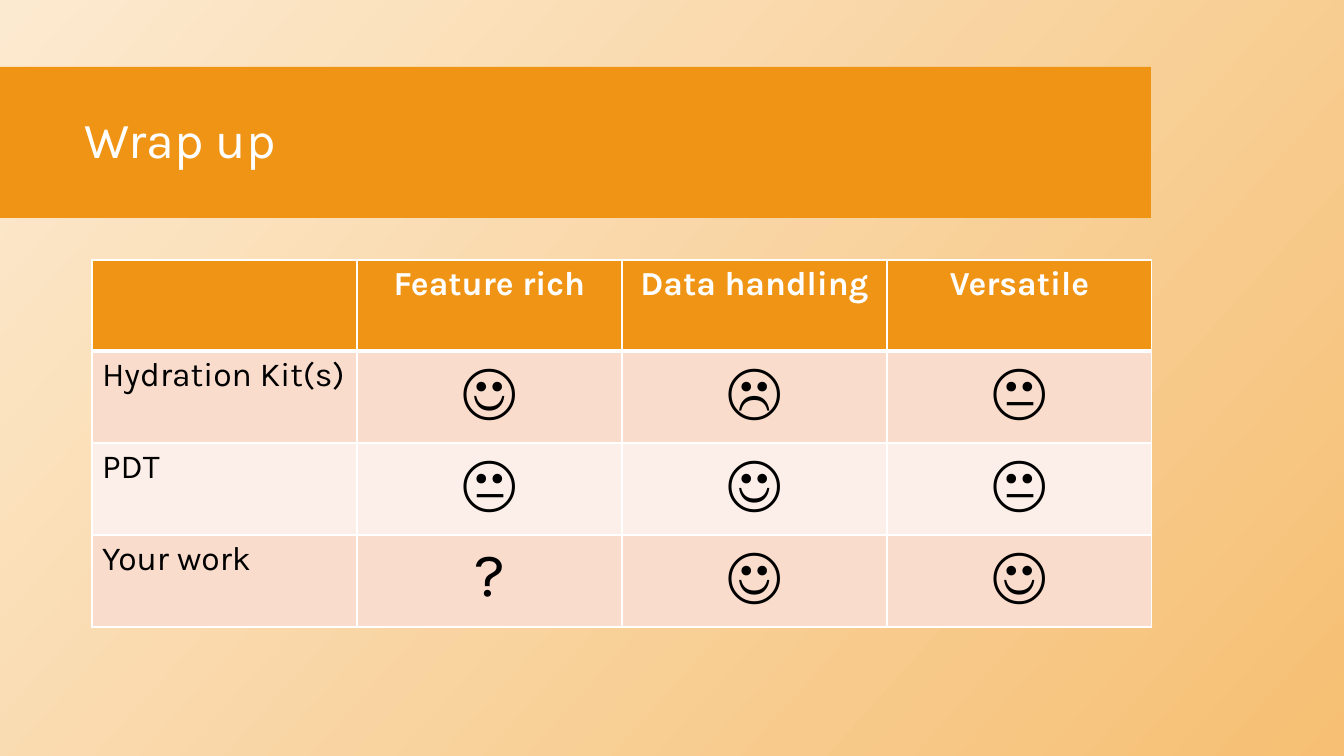
import pptx
import pptx.util
import pptx.dml.color
import pptx.enum.shapes
import pptx.enum.text
import pptx.oxml.ns
from lxml import etree

RGB = pptx.dml.color.RGBColor
ORANGE = RGB(0xF0, 0x94, 0x15)
BG_LIGHT = RGB(0xFC, 0xEA, 0xD0)
BG_DARK = RGB(0xF6, 0xBF, 0x73)
BAND_DARK = RGB(0xF9, 0xDC, 0xCC)
BAND_LIGHT = RGB(0xFC, 0xEE, 0xE8)
WHITE = RGB(0xFF, 0xFF, 0xFF)
BLACK = RGB(0, 0, 0)

FONT = "Karla"
EMU_PER_PX = 12192000 / 1344

HEADER = ["", "Feature rich", "Data handling", "Versatile"]
RATINGS = [
    ["Hydration Kit(s)", "☺", "☹", "😐"],
    ["PDT", "😐", "☺", "😐"],
    ["Your work", "?", "☺", "☺"],
]


def px(n):
    return pptx.util.Emu(round(n * EMU_PER_PX))


def set_background(s):
    fill = s.background.fill
    fill.gradient()
    fill.gradient_angle = 360 - 42  # measured counter-clockwise
    for stop, color in zip(fill.gradient_stops, (BG_LIGHT, BG_DARK)):
        stop.color.rgb = color


def set_text(p, text, size, color, bold=False):
    p.text = text
    p.font.name = FONT
    p.font.size = pptx.util.Pt(size)
    p.font.color.rgb = color
    p.font.bold = bold


def add_band(s, x, y, w, h):
    sp = s.shapes.add_shape(pptx.enum.shapes.MSO_SHAPE.RECTANGLE,
                            px(x), px(y), px(w), px(h))
    sp.shadow.inherit = False
    sp.fill.solid()
    sp.fill.fore_color.rgb = ORANGE
    sp.line.fill.background()


def add_title(s, text, x, y, w, h):
    tf = s.shapes.add_textbox(px(x), px(y), px(w), px(h)).text_frame
    tf.word_wrap = True
    tf.vertical_anchor = pptx.enum.text.MSO_ANCHOR.MIDDLE
    p = tf.paragraphs[0]
    set_text(p, text, 36, WHITE)
    p.line_spacing = 0.9


def set_borders(cell, bottom, top):
    tcPr = cell._tc.get_or_add_tcPr()
    qn = pptx.oxml.ns.qn
    for side, width in (("L", 1), ("R", 1), ("T", top), ("B", bottom)):
        ln = etree.SubElement(tcPr, qn(f"a:ln{side}"),
                              w=str(pptx.util.Pt(width)))
        fill = etree.SubElement(ln, qn("a:solidFill"))
        etree.SubElement(fill, qn("a:srgbClr"), val=str(WHITE))


def fill_cell(cell, text, row, col):
    is_header = row == 0
    # Borders come before the fill in the cell properties
    set_borders(cell, bottom=3 if is_header else 1, top=3 if row == 1 else 1)
    cell.fill.solid()
    if is_header:
        cell.fill.fore_color.rgb = ORANGE
    else:
        cell.fill.fore_color.rgb = BAND_DARK if row % 2 else BAND_LIGHT
    p = cell.text_frame.paragraphs[0]
    size = 24 if is_header or col == 0 else 44
    set_text(p, text, size, WHITE if is_header else BLACK, is_header)
    if col:
        p.alignment = pptx.enum.text.PP_ALIGN.CENTER


def add_ratings_table(s, rows, x, y, col_w, header_h, row_h):
    n_rows, n_cols = len(rows), len(rows[0])
    height = header_h + row_h * (n_rows - 1)
    table = s.shapes.add_table(n_rows, n_cols, px(x), px(y),
                               px(col_w * n_cols), px(height)).table
    for column in table.columns:
        column.width = px(col_w)
    for i, texts in enumerate(rows):
        table.rows[i].height = px(row_h if i else header_h)
        for j, text in enumerate(texts):
            fill_cell(table.cell(i, j), text, i, j)


def main():
    prs = pptx.Presentation()
    prs.slide_width, prs.slide_height = px(1344), px(756)
    s = prs.slides.add_slide(prs.slide_layouts[6])
    set_background(s)

    # Title band
    add_band(s, 0, 67, 1151, 151)
    add_title(s, "Wrap up", 75, 83, 1059, 119)

    # Comparison table
    add_ratings_table(s, [HEADER] + RATINGS, 92, 260,
                      col_w=265, header_h=91, row_h=92)

    prs.save("out.pptx")


if __name__ == "__main__":
    main()
